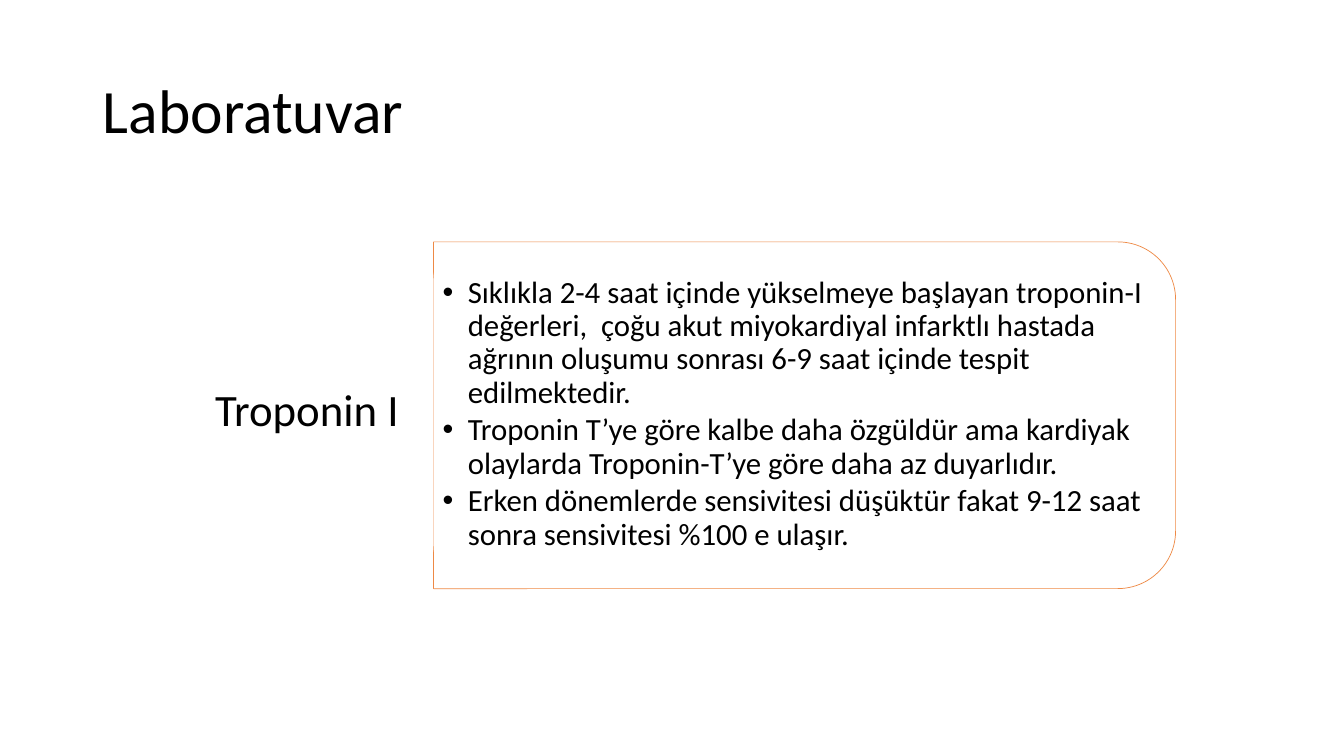
from lxml.etree import SubElement
from pptx import Presentation
from pptx.dml.color import RGBColor
from pptx.enum.shapes import MSO_SHAPE
from pptx.enum.text import MSO_ANCHOR, MSO_AUTO_SIZE, PP_ALIGN
from pptx.oxml.ns import qn
from pptx.util import Inches, Pt

TITLE = "Laboratuvar"
LABEL = "Troponin I"
FINDINGS = [
    "Sıklıkla 2-4 saat içinde yükselmeye başlayan troponin-I değerleri,  çoğu akut "
    "miyokardiyal infarktlı hastada ağrının oluşumu sonrası 6-9 saat içinde tespit "
    "edilmektedir.",
    "Troponin T’ye göre kalbe daha özgüldür ama kardiyak olaylarda Troponin-T’ye göre "
    "daha az duyarlıdır.",
    "Erken dönemlerde sensivitesi düşüktür fakat 9-12 saat sonra sensivitesi %100 e "
    "ulaşır.",
]
THEME = {
    "font": "Calibri",
    "text": RGBColor(0x00, 0x00, 0x00),
    "fill": RGBColor(0xFF, 0xFF, 0xFF),
    "line": RGBColor(0xED, 0x7D, 0x31),
    "opacity": "90000",
    "title": Pt(44),
    "label": Pt(32),
    "body": Pt(22),
}

TITLE_BOX = (0.92, 0.4, 11.5, 1.45)
LABEL_BOX = (1.79, 2.35, 2.51, 3.48)
PANEL_BOX = (4.3, 2.4, 7.36, 3.44)
FINDINGS_BOX = (4.3, 2.56, 7.19, 3.1)


def place(sp, box):
    sp.left, sp.top, sp.width, sp.height = map(Inches, box)


def turned(box):
    """Return the box that covers the given one after a quarter turn."""
    left, top, width, height = box
    shift = (width - height) / 2
    return left + shift, top - shift, height, width


def add_plain_shape(slide, kind, box):
    sp = slide.shapes.add_shape(kind, *map(Inches, box))
    sp.shadow.inherit = False
    sp.fill.solid()
    sp.fill.fore_color.rgb = THEME["fill"]
    sp.line.fill.background()
    return sp


def write(sp, lines, size, align=PP_ALIGN.LEFT, after=0, margins=(0.1, 0.05)):
    tf = sp.text_frame
    tf.text = "\n".join(lines)
    tf.word_wrap = True
    tf.auto_size = MSO_AUTO_SIZE.NONE
    tf.vertical_anchor = MSO_ANCHOR.MIDDLE
    tf.margin_left = tf.margin_right = Inches(margins[0])
    tf.margin_top = tf.margin_bottom = Inches(margins[1])
    for p in tf.paragraphs:
        p.alignment = align
        p.line_spacing = 0.9
        p.space_before = Pt(0)
        p.space_after = Pt(after)
        for r in p.runs:
            r.font.name = THEME["font"]
            r.font.size = size
            r.font.color.rgb = THEME["text"]


def set_bullets(sp, indent):
    for p in sp.text_frame.paragraphs:
        pPr = p._p.get_or_add_pPr()
        pPr.set("marL", str(indent))
        pPr.set("indent", str(-indent))
        SubElement(pPr, qn("a:buFont")).set("typeface", "Arial")
        SubElement(pPr, qn("a:buChar")).set("char", "•")


def add_panel(slide):
    panel = add_plain_shape(slide, MSO_SHAPE.ROUND_2_SAME_RECTANGLE, turned(PANEL_BOX))
    panel.rotation = 90
    panel.line.color.rgb = THEME["line"]
    panel.line.width = Pt(0.5)
    for color in panel._element.spPr.iter(qn("a:srgbClr")):
        SubElement(color, qn("a:alpha")).set("val", THEME["opacity"])
    return panel


def main():
    prs = Presentation()
    prs.slide_width, prs.slide_height = Inches(13.33), Inches(7.5)
    slide = prs.slides.add_slide(prs.slide_layouts[1])

    title, findings = slide.placeholders
    place(title, TITLE_BOX)
    write(title, [TITLE], THEME["title"])

    place(findings, FINDINGS_BOX)
    write(findings, FINDINGS, THEME["body"], after=3.3, margins=(0.09, 0.05))
    set_bullets(findings, Inches(0.25))

    panel = add_panel(slide)
    findings._element.addprevious(panel._element)  # the list lies on the panel

    label = add_plain_shape(slide, MSO_SHAPE.ROUNDED_RECTANGLE, LABEL_BOX)
    write(label, [LABEL], THEME["label"], PP_ALIGN.CENTER, margins=(0.13, 0.07))

    prs.save("out.pptx")


if __name__ == "__main__":
    main()
